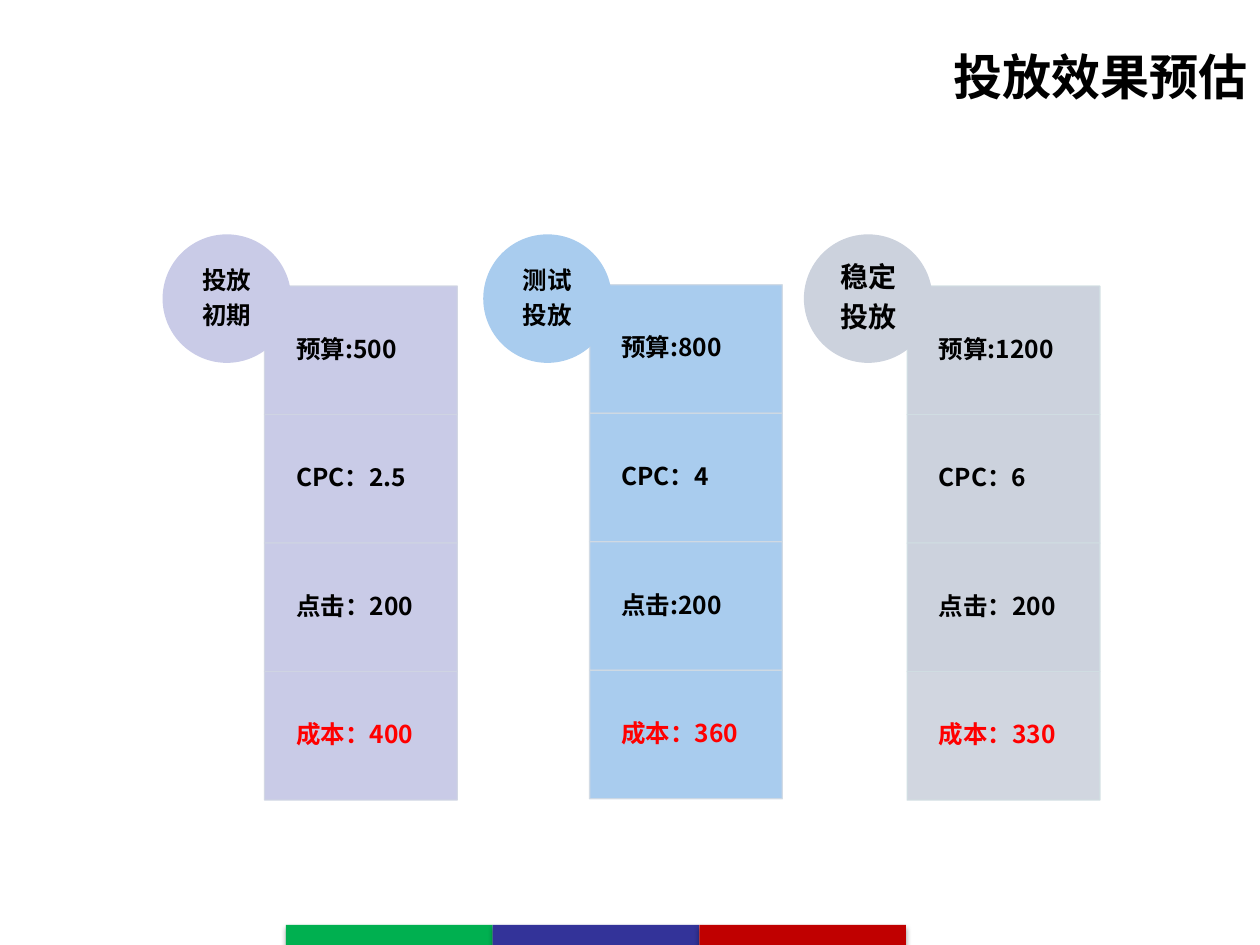
from lxml.etree import SubElement
from pptx import Presentation
from pptx.dml.color import RGBColor
from pptx.enum.shapes import MSO_SHAPE as Shape
from pptx.enum.text import MSO_ANCHOR as Anchor, MSO_AUTO_SIZE as Fit, PP_ALIGN as Align
from pptx.oxml.ns import qn
from pptx.util import Inches, Pt

FONT = "Noto Sans CJK SC"
COLORS = {
    "text": "000000", "cost": "FF0000",
    "lilac": "C9CBE7", "blue": "A9CCEE", "grey": "CCD2DD",
    "lilac_edge": "D0D5E3", "blue_edge": "D1DAE3", "grey_edge": "D1DEE3",
    "green": "00B050", "navy": "333399", "red": "C00000",
}
TITLE = "投放效果预估"
# stage name, its size, colour, left and top of the column, rows, alpha of last row
STAGES = [
    (["投放", "初期"], 14, "lilac", 2.1, 2.27,
     ["预算:500", "CPC：2.5", "点击：200", "成本：400"], 100),
    (["测试", "投放"], 14, "blue", 4.68, 2.26,
     ["预算:800", "CPC：4", "点击:200", "成本：360"], 100),
    (["稳定", "投放"], 16, "grey", 7.2, 2.27,
     ["预算:1200", "CPC：6", "点击：200", "成本：330"], 90),
]
BARS = ["green", "navy", "red"]

CELL_W, CELL_H = 1.53, 1.02
DISC, DISC_LEFT, DISC_TOP, DISC_STEP = 1.02, 1.29, 1.86, 2.545
BAR_LEFT, BAR_TOP, BAR_W, BAR_H = 2.27, 7.34, 1.64, 0.16


def rgb(name):
    return RGBColor.from_string(COLORS[name])


def fade(node, percent):
    """Set the opacity of the first colour found below node."""
    color = next(node.iter(qn("a:srgbClr")))
    SubElement(color, qn("a:alpha"), val=str(percent * 1000))


def draw(kind, left, top, width, height, color):
    shape = slide.shapes.add_shape(kind, *map(Inches, (left, top, width, height)))
    shape.shadow.inherit = False
    shape.fill.solid()
    shape.fill.fore_color.rgb = rgb(color)
    shape.line.fill.background()
    return shape


def write(shape, lines, size, color="text", align=Align.LEFT, inset=None, tight=True):
    frame = shape.text_frame
    form = {"word_wrap": tight, "vertical_anchor": Anchor.MIDDLE if tight else Anchor.TOP}
    if inset:
        sides = ("margin_left", "margin_top", "margin_right", "margin_bottom")
        form.update(zip(sides, map(Inches, inset)))
    for key, value in form.items():
        setattr(frame, key, value)
    frame.text = "\n".join(lines)
    for para in frame.paragraphs:
        para.alignment = align
        if tight:
            para.line_spacing = 0.9
            after = SubElement(para._p.get_or_add_pPr(), qn("a:spcAft"))
            SubElement(after, qn("a:spcPct"), val="35000")
        font = para.runs[0].font
        for key, value in {"name": FONT, "size": Pt(size), "bold": True}.items():
            setattr(font, key, value)
        font.color.rgb = rgb(color)
        SubElement(font._element, qn("a:ea"), typeface=FONT)


def add_stage(index, name, size, color, left, top, rows, alpha):
    last = len(rows) - 1
    for row, text in enumerate(rows):
        cell = draw(Shape.RECTANGLE, left, top + row * CELL_H, CELL_W, CELL_H, color)
        cell.line.color.rgb = rgb(color + "_edge")
        cell.line.width = Pt(0.75)
        fade(cell.line._ln, 90)
        if row == last and alpha < 100:
            fade(cell._element.spPr.find(qn("a:solidFill")), alpha)
        write(cell, [text], 14, "cost" if row == last else "text",
              inset=(0.25, 0.11, 0.11, 0.11))
    disc = draw(Shape.OVAL, DISC_LEFT + index * DISC_STEP, DISC_TOP, DISC, DISC, color)
    write(disc, name, size, align=Align.CENTER, inset=(0, 0, 0, 0))
    # The oval's own text area is narrower than the disc, yet fits both words


def add_bar(index, color):
    bar = draw(Shape.RECTANGLE, BAR_LEFT + index * BAR_W, BAR_TOP, BAR_W, BAR_H, color)
    effects = bar._element.spPr.find(qn("a:effectLst"))
    shadow = SubElement(effects, qn("a:outerShdw"), blurRad=str(Pt(3.1)),
                        dist=str(Pt(1.8)), dir="5400000", rotWithShape="0")
    SubElement(shadow, qn("a:srgbClr"), val=COLORS["text"])
    fade(shadow, 35)


prs = Presentation()
prs.slide_width, prs.slide_height = Inches(10), Inches(7.5)
slide = prs.slides.add_slide(prs.slide_layouts[6])

for index, stage in enumerate(STAGES):
    add_stage(index, *stage)

title = slide.shapes.add_textbox(*map(Inches, (7.44, 0.32, 2.56, 0.57)))
write(title, [TITLE], 28, align=Align.RIGHT, tight=False)
title.text_frame.auto_size = Fit.SHAPE_TO_FIT_TEXT

for index, color in enumerate(BARS):
    add_bar(index, color)

prs.save("out.pptx")
